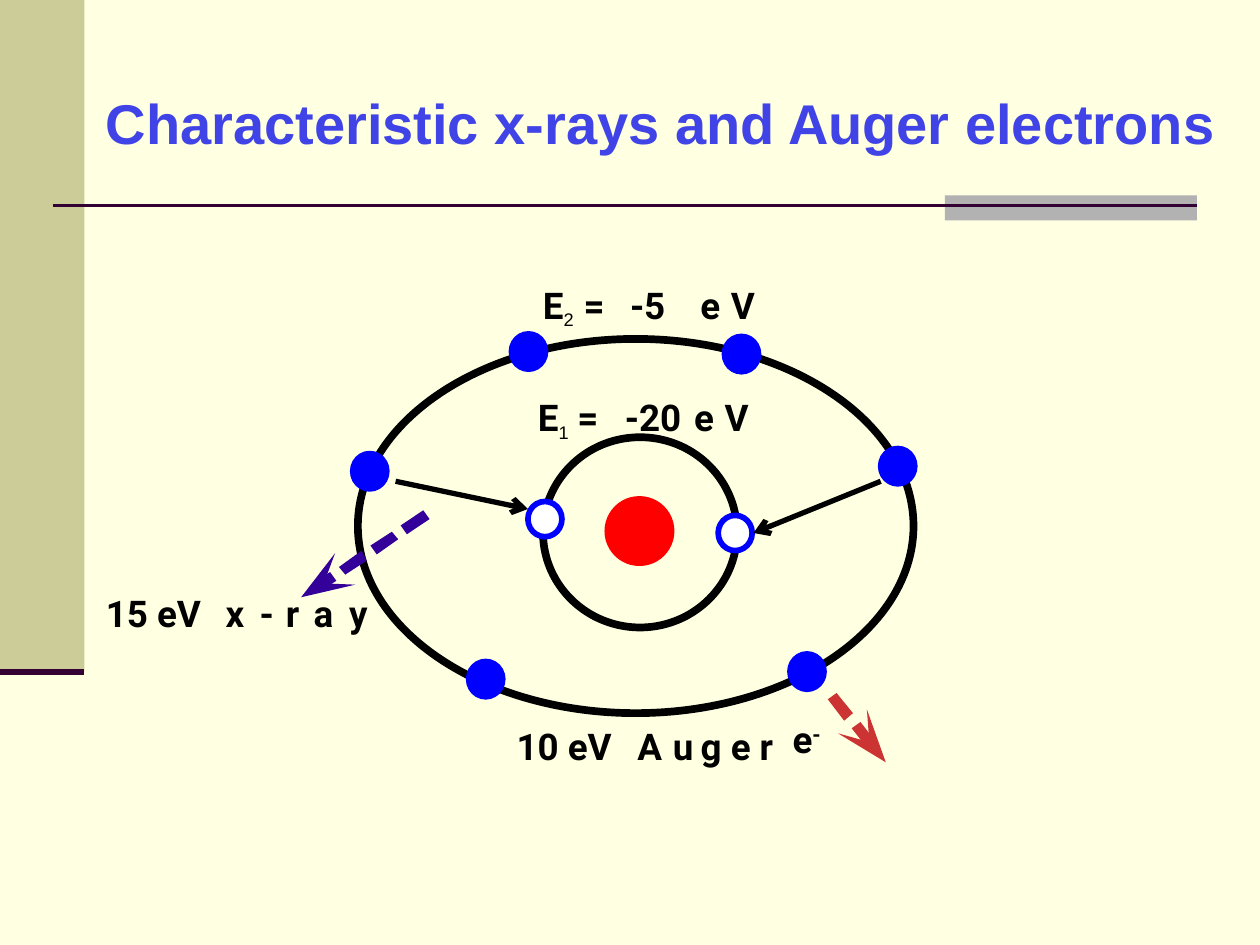
"""Build the slide on characteristic x-rays and Auger electrons."""
import pptx
import pptx.dml.color
import pptx.enum.shapes
import pptx.enum.text
import pptx.oxml.ns
import pptx.util
from dataclasses import dataclass
from lxml import etree

Inches = pptx.util.Inches
Pt = pptx.util.Pt
SHAPES = pptx.enum.shapes.MSO_SHAPE
qn = pptx.oxml.ns.qn


@dataclass(frozen=True)
class Theme:
    """Colours, fonts and sizes."""
    paper: str = "FFFFE1"
    band: str = "CCCC99"
    tab: str = "B2B2B2"
    rule: str = "330033"
    title: str = "4044E6"
    ink: str = "000000"
    electron: str = "0000FF"
    vacancy: str = "FFFFFF"
    nucleus: str = "FF0000"
    xray: str = "330099"
    auger: str = "CC3333"
    title_font: str = "Arial"
    label_font: str = "Roboto"
    title_size: float = 32
    label_size: float = 21
    sub_size: float = 18
    orbit_width: float = 4.38
    electron_width: float = 3.25


T = Theme()

TITLE = "Characteristic x-rays and Auger electrons"
BLOCKS = [((0, 0, 0.67, 5.33), T.band), ((7.5, 1.55, 2, 0.2), T.tab)]
RULES = [((0.42, 1.63), (9.5, 1.63), 1.5), ((0, 5.33), (0.67, 5.33), 3.5)]
ORBITS = [(2.84, 2.69, 4.41, 2.97), (4.31, 3.47, 1.54, 1.51)]
NUCLEUS = (4.82, 3.96, 0.51, 0.51)
VACANCIES = [(5.7, 4.09), (4.19, 3.98)]
ELECTRONS = [(3.72, 5.25), (6.27, 5.19), (6.99, 3.56),
             (4.06, 2.65), (2.8, 3.6), (5.75, 2.67)]
ELECTRON_SIZE = (0.27, 0.28)
TRANSITIONS = [((3.14, 3.82), (4.19, 4.04)), ((6.99, 3.82), (5.98, 4.23))]
EMISSIONS = {
    T.xray: [
        [(2.39, 4.74), (2.66, 4.39), (2.57, 4.63), (2.82, 4.64)],
        [(3.41, 4.12), (3.23, 4.24), (3.18, 4.17), (3.36, 4.05)],
        [(3.16, 4.28), (2.99, 4.4), (2.94, 4.33), (3.11, 4.22)],
        [(2.91, 4.45), (2.74, 4.56), (2.69, 4.5), (2.87, 4.37)],
        [(2.67, 4.61), (2.59, 4.66), (2.54, 4.59), (2.62, 4.54)],
    ],
    T.auger: [
        [(7.03, 6.05), (6.65, 5.82), (6.9, 5.89), (6.88, 5.63)],
        [(6.64, 5.5), (6.77, 5.66), (6.7, 5.72), (6.57, 5.55)],
        [(6.83, 5.73), (6.93, 5.86), (6.87, 5.92), (6.76, 5.78)],
    ],
}

LABEL = {"size": Pt(T.label_size), "name": T.label_font, "bold": True}
SUB = {"size": Pt(T.sub_size), "name": T.title_font, "bold": False}
HEADING = {"size": Pt(T.title_size), "name": T.title_font, "bold": True}

LABEL_ROWS = [
    (4.69, [("15 eV", 0.84, 0.87), ("x", 1.79, 0.16), ("-", 2.06, 0.31),
            ("r", 2.27, 0.33), ("a", 2.49, 0.4), ("y", 2.77, 0.38)]),
    (5.74, [("10 eV", 4.1, 0.87), ("A", 5.06, 0.44), ("u", 5.34, 0.42),
            ("g", 5.56, 0.42), ("e", 5.8, 0.4), ("r", 6.03, 0.33)]),
    (3.13, [(" =", 4.51, 0.36), ("-2", 4.96, 0.31), ("0", 5.24, 0.4),
            ("e", 5.51, 0.4), ("V", 5.75, 0.22)]),
    (2.24, [(" =", 4.56, 0.36), ("-5", 5, 0.31), ("e", 5.56, 0.4),
            ("V", 5.8, 0.22)]),
]
SCRIPT_LABELS = [
    ((4.27, 3.13, 0.26, 0.35), "E", "1", SUB, -25),
    ((4.31, 2.24, 0.26, 0.35), "E", "2", SUB, -25),
    ((6.29, 5.69, 0.4, 0.47), "e", "-", LABEL, 30),
]


def rgb(value):
    """Turn a hex string into a colour."""
    return pptx.dml.color.RGBColor.from_string(value)


def paint(s, fill=None, line=None, width=0):
    """Set the fill and outline of a shape."""
    s.shadow.inherit = False
    if fill:
        s.fill.solid()
        s.fill.fore_color.rgb = rgb(fill)
    else:
        s.fill.background()
    if line:
        s.line.color.rgb = rgb(line)
        s.line.width = Pt(width)
    else:
        s.line.fill.background()


def add_preset(shapes, kind, box, **look):
    """Add a painted preset shape."""
    paint(shapes.add_shape(kind, *map(Inches, box)), **look)


def add_line(shapes, start, end, color, width, arrow=False):
    """Add a straight line, with an arrowhead at its end if asked."""
    s = shapes.add_connector(pptx.enum.shapes.MSO_CONNECTOR.STRAIGHT,
                             *map(Inches, start + end))
    s.line.color.rgb = rgb(color)
    s.line.width = Pt(width)
    if arrow:
        etree.SubElement(s.line._get_or_add_ln(), qn("a:tailEnd"), type="arrow")
    etree.SubElement(s._element.spPr, qn("a:effectLst"))


def add_polygon(shapes, points, color):
    """Add a closed filled outline."""
    start, *rest = [(Inches(x), Inches(y)) for x, y in points]
    builder = shapes.build_freeform(*start)
    builder.add_line_segments(rest, close=True)
    paint(builder.convert_to_shape(), fill=color)


def add_text(shapes, box, runs, frame, color=T.ink):
    """Add a text box from (text, font, baseline) runs."""
    tf = shapes.add_textbox(*map(Inches, box)).text_frame
    for name, value in frame.items():
        setattr(tf, name, value)
    p = tf.paragraphs[0]
    for text, font, baseline in runs:
        r = p.add_run()
        r.text = text
        for name, value in font.items():
            setattr(r.font, name, value)
        r.font.color.rgb = rgb(color)
        if baseline:
            r._r.get_or_add_rPr().set("baseline", str(baseline * 1000))


def main():
    """Draw and save the slide."""
    prs = pptx.Presentation()
    prs.slide_width, prs.slide_height = Inches(10), Inches(7.5)
    slide = prs.slides.add_slide(prs.slide_layouts[6])
    slide.background.fill.solid()
    slide.background.fill.fore_color.rgb = rgb(T.paper)
    shapes = slide.shapes

    for box, color in BLOCKS:
        add_preset(shapes, SHAPES.RECTANGLE, box, fill=color)
    for start, end, width in RULES:
        add_line(shapes, start, end, T.rule, width)
    add_text(shapes, (0.74, 0.34, 9.08, 1.25), [(TITLE, HEADING, 0)],
             {"word_wrap": True,
              "vertical_anchor": pptx.enum.text.MSO_ANCHOR.MIDDLE}, T.title)

    rings = [(box, None, T.ink, T.orbit_width) for box in ORBITS]
    rings.append((NUCLEUS, T.nucleus, T.nucleus, T.electron_width))
    for places, fill in ((VACANCIES, T.vacancy), (ELECTRONS, T.electron)):
        rings += [(at + ELECTRON_SIZE, fill, T.electron, T.electron_width)
                  for at in places]
    for box, fill, line, width in rings:
        add_preset(shapes, SHAPES.OVAL, box, fill=fill, line=line, width=width)

    for color, pieces in EMISSIONS.items():
        for points in pieces:
            add_polygon(shapes, points, color)
    for start, end in TRANSITIONS:
        add_line(shapes, start, end, T.ink, 3, arrow=True)

    frame = {"word_wrap": False,
             "auto_size": pptx.enum.text.MSO_AUTO_SIZE.SHAPE_TO_FIT_TEXT}
    frame.update({f"margin_{side}": 0
                  for side in ("left", "top", "right", "bottom")})
    for top, labels in LABEL_ROWS:
        for text, left, width in labels:
            add_text(shapes, (left, top, width, 0.35), [(text, LABEL, 0)], frame)
    for box, base, script, font, baseline in SCRIPT_LABELS:
        add_text(shapes, box, [(base, LABEL, 0), (script, font, baseline)], frame)

    prs.save("out.pptx")


if __name__ == "__main__":
    main()
